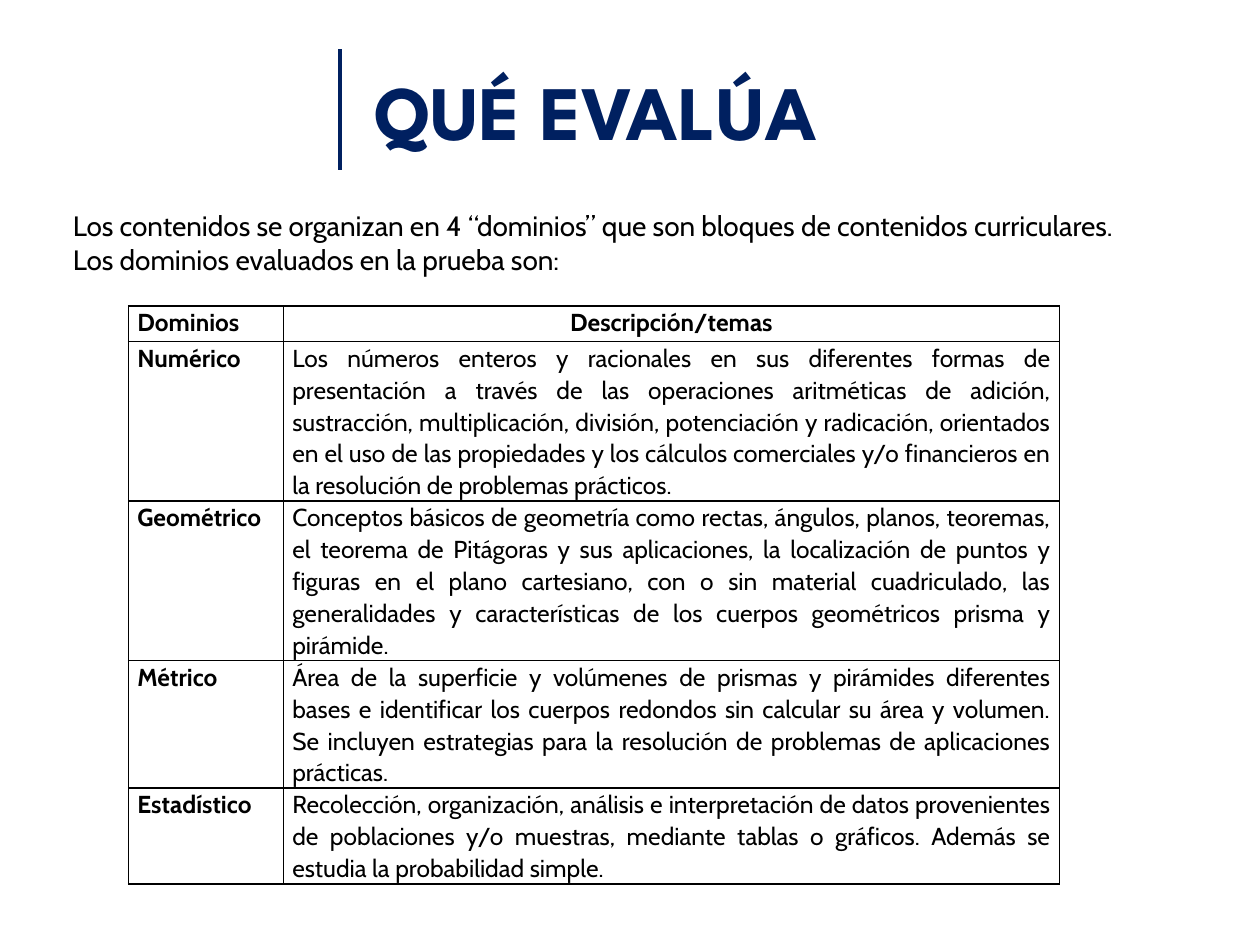
"""Builds a slide with a title, an introduction and a table of test domains."""
import pptx
import pptx.dml.color
import pptx.enum.shapes
import pptx.enum.text
import pptx.oxml
import pptx.oxml.ns
import pptx.util

Inches = pptx.util.Inches
Pt = pptx.util.Pt
ALIGN = pptx.enum.text.PP_ALIGN
ANCHOR = pptx.enum.text.MSO_ANCHOR
COLORS = {"navy": "002060", "black": "000000"}

TITLE = "QUÉ EVALÚA"
INTRO = [
    "Los contenidos se organizan en 4 “dominios” que son bloques de contenidos curriculares.",
    "Los dominios evaluados en la prueba son:",
]
ROWS = [
    ("Dominios", "Descripción/temas"),
    ("Numérico",
     "Los números enteros y racionales en sus diferentes formas de presentación a través de "
     "las operaciones aritméticas de adición, sustracción, multiplicación, división, "
     "potenciación y radicación, orientados en el uso de las propiedades y los cálculos "
     "comerciales y/o financieros en la resolución de problemas prácticos."),
    ("Geométrico",
     "Conceptos básicos de geometría como rectas, ángulos, planos, teoremas, el teorema de "
     "Pitágoras y sus aplicaciones, la localización de puntos y figuras en el plano "
     "cartesiano, con o sin material cuadriculado, las generalidades y características de "
     "los cuerpos geométricos prisma y pirámide."),
    ("Métrico",
     "Área de la superficie y volúmenes de prismas y pirámides diferentes bases e "
     "identificar los cuerpos redondos sin calcular su área y volumen. Se incluyen "
     "estrategias para la resolución de problemas de aplicaciones prácticas."),
    ("Estadístico",
     "Recolección, organización, análisis e interpretación de datos provenientes de "
     "poblaciones y/o muestras, mediante tablas o gráficos. Además se estudia la "
     "probabilidad simple."),
]
WIDTHS = [1.23, 6.16]
HEIGHTS = [0.28, 0.98, 0.98, 0.73, 0.73]


class Deck:
    def __init__(self, slide):
        self.slide = slide
        self.head = "League Spartan"
        self.body = "Cabin"

    def style(self, para, font, size, color, bold=False, align=ALIGN.LEFT):
        para.alignment = align
        for run in para.runs:
            run.font.name = font
            run.font.size = Pt(size)
            run.font.bold = bold
            run.font.color.rgb = pptx.dml.color.RGBColor.from_string(COLORS[color])

    def title(self, text, left, top, width, height):
        shape = self.slide.shapes.title
        shape.left, shape.top = Inches(left), Inches(top)
        shape.width, shape.height = Inches(width), Inches(height)
        frame = shape.text_frame
        frame.text = text
        frame.vertical_anchor = ANCHOR.MIDDLE
        frame.margin_left = frame.margin_right = Inches(0.05)
        frame.margin_top = frame.margin_bottom = Inches(0.05)
        self.style(frame.paragraphs[0], self.head, 44, "navy", bold=True)

    def rule(self, x, top, end):
        line = self.slide.shapes.add_connector(
            pptx.enum.shapes.MSO_CONNECTOR.STRAIGHT,
            Inches(x), Inches(top), Inches(x), Inches(end))
        line.line.color.rgb = pptx.dml.color.RGBColor.from_string(COLORS["navy"])
        line.line.width = Pt(2)
        pptx.oxml.ns.qn("a:effectLst")
        line._element.spPr.append(pptx.oxml.parse_xml(
            f'<a:effectLst {pptx.oxml.ns.nsdecls("a")}/>'))

    def text(self, lines, left, top, width, height):
        box = self.slide.shapes.add_textbox(
            Inches(left), Inches(top), Inches(width), Inches(height))
        frame = box.text_frame
        frame.word_wrap = True
        frame.auto_size = pptx.enum.text.MSO_AUTO_SIZE.SHAPE_TO_FIT_TEXT
        frame.text = "\n".join(lines)
        for para in frame.paragraphs:
            self.style(para, self.body, 16, "black")

    def border(self, cell):
        props = cell._tc.get_or_add_tcPr()
        for side in ("lnL", "lnR", "lnT", "lnB"):
            props.append(pptx.oxml.parse_xml(
                f'<a:{side} {pptx.oxml.ns.nsdecls("a")} w="{Pt(1)}"><a:solidFill>'
                f'<a:srgbClr val="{COLORS["black"]}"/></a:solidFill></a:{side}>'))

    def cell(self, cell, text, bold, align):
        self.border(cell)
        cell.fill.background()
        cell.margin_left = cell.margin_right = Inches(0.07)
        cell.margin_top = cell.margin_bottom = 0
        para = cell.text_frame.paragraphs[0]
        para.text = text
        para.line_spacing = 1.07
        para.space_after = Pt(8)
        self.style(para, self.body, 14, "black", bold, align)

    def table(self, rows, left, top, widths, heights):
        grid = self.slide.shapes.add_table(
            len(rows), len(widths), Inches(left), Inches(top),
            Inches(sum(widths)), Inches(sum(heights))).table
        grid.first_row = grid.horz_banding = False
        for col, width in zip(grid.columns, widths):
            col.width = Inches(width)
        for row, height in zip(grid.rows, heights):
            row.height = Inches(height)
        for r, row in enumerate(rows):
            for c, text in enumerate(row):
                align = ALIGN.CENTER if (r, c) == (0, 1) else ALIGN.JUSTIFY
                self.cell(grid.cell(r, c), text, r == 0 or c == 0, align)


def main():
    show = pptx.Presentation()
    show.slide_width, show.slide_height = Inches(10), Inches(7.5)
    deck = Deck(show.slides.add_slide(show.slide_layouts[5]))
    deck.rule(2.7, 0.39, 1.35)
    deck.title(TITLE, 2.92, 0.39, 6.58, 0.96)
    deck.table(ROWS, 1.02, 2.43, WIDTHS, HEIGHTS)
    deck.text(INTRO, 0.48, 1.61, 8.64, 0.64)
    show.save("out.pptx")


if __name__ == "__main__":
    main()
